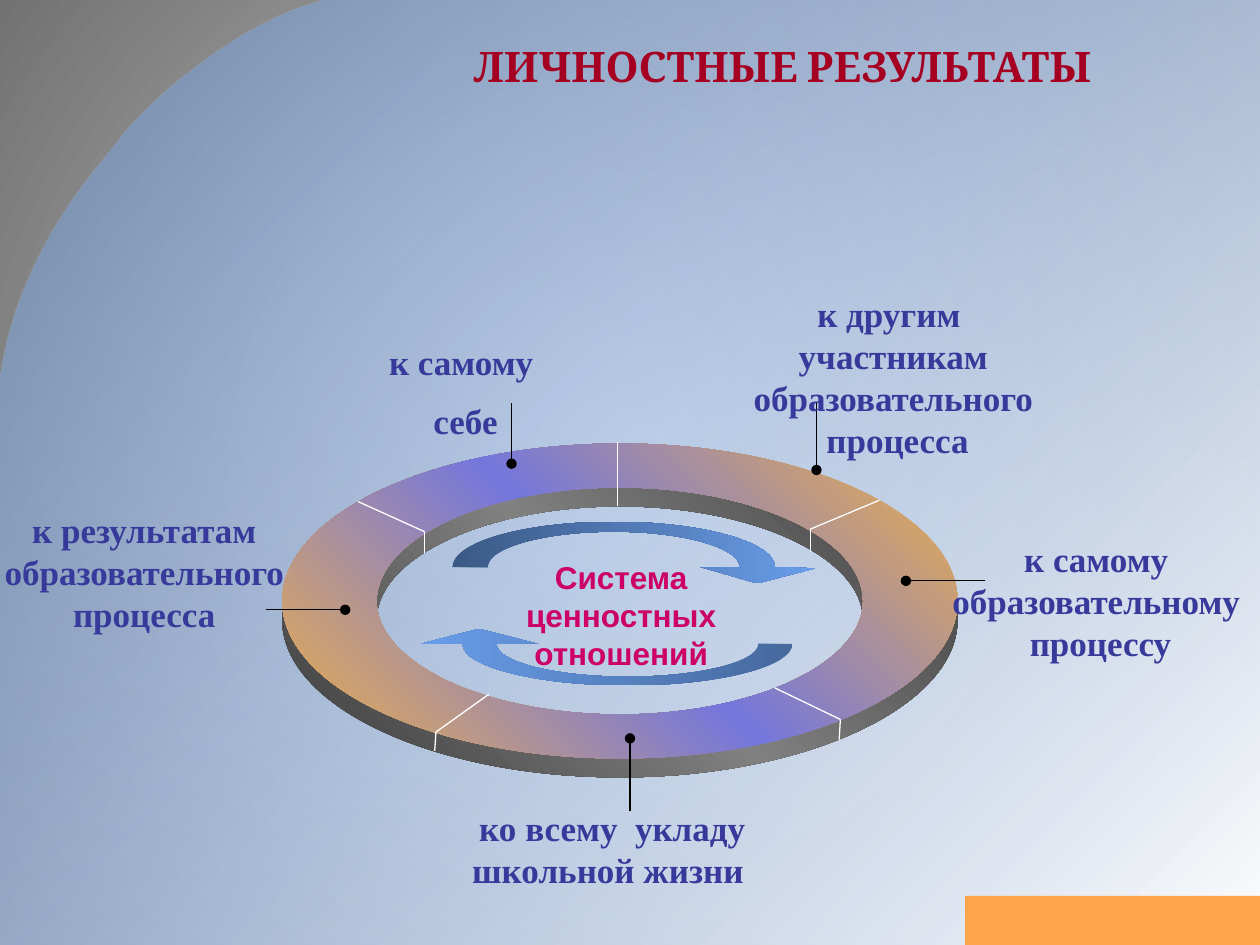
from math import cos, radians, sin

from lxml import etree
from pptx import Presentation
from pptx.dml.color import RGBColor
from pptx.enum import shapes, text
from pptx.oxml import ns
from pptx.util import Inches, Pt

CRIMSON = RGBColor(0xA5, 0x00, 0x21)
INDIGO = RGBColor(0x37, 0x39, 0x9B)
MAGENTA = RGBColor(0xCC, 0x00, 0x66)
ORANGE = RGBColor(0xFF, 0xA5, 0x4B)
WHITE = RGBColor(0xFF, 0xFF, 0xFF)
BLACK = RGBColor(0x00, 0x00, 0x00)
SKY = RGBColor(0x69, 0x9D, 0xE9)
NAVY = RGBColor(0x3B, 0x59, 0x85)
STEEL = RGBColor(0x46, 0x69, 0x9E)
COAL = RGBColor(0x3B, 0x3B, 0x3B)
GREY = RGBColor(0x80, 0x80, 0x80)
GOLD = RGBColor(0xEF, 0xB0, 0x49)
VIOLET = RGBColor(0x74, 0x76, 0xDC)
SILVER = RGBColor(0xCF, 0xCF, 0xCF)
SLATE = RGBColor(0x72, 0x72, 0x72)

TITLE = "ЛИЧНОСТНЫЕ РЕЗУЛЬТАТЫ"
TITLE_FONT = dict(name="Cambria", size=Pt(24), bold=True)
LABEL_FONT = dict(name="Times New Roman", size=Pt(20), bold=True)
CENTRE_FONT = dict(name="Arial", size=Pt(18), bold=True)

# paragraphs, (left, top, width, height), font, colour
LABELS = [
    (["к самому", " себе"], (2.24, 2.65, 2.84, 0.93), LABEL_FONT, INDIGO),
    (["к другим  участникам образовательного  процесса"],
     (5.86, 2.27, 2.46, 1.43), LABEL_FONT, INDIGO),
    (["к самому  образовательному  процессу"],
     (7.28, 4.22, 2.91, 1.1), LABEL_FONT, INDIGO),
    (["ко всему  укладу школьной жизни "], (3.36, 6.35, 3, 0.77), LABEL_FONT, INDIGO),
    (["к результатам образовательного процесса"],
     (-0.35, 3.99, 2.99, 1.1), LABEL_FONT, INDIGO),
    (["Система ценностных отношений"], (3.98, 4.38, 1.9, 1), CENTRE_FONT, MAGENTA),
]

# An outline is a start point, then segments: one point for a line, three for a curve
PANEL = [
    (2.58, 0),
    [(1.9, 0.16), (1.16, 0.83), (0.98, 1.07)],
    [(0.8, 1.32), (0.16, 1.94), (0, 3.01)],
    [(0, 7.5)], [(10, 7.5)], [(10, 0)],
]

RING_X, RING_OUTER, RING_INNER = 4.92, (2.68, 1.25), (1.93, 0.9)
# centre height, gradient stops; the side lies under the face
RINGS = [
    (4.92, [(0, COAL), (50, GREY), (100, COAL)]),
    (4.77, [(0, GOLD), (50, VIOLET), (100, GOLD)]),
]
RING_SEAMS = [
    [(4.9, 4.02), (4.9, 3.51)],
    [(6.98, 3.97), (6.43, 4.2), (6.43, 4.38)],
    [(2.84, 3.98), (3.37, 4.22), (3.37, 4.39)],
    [(3.88, 5.51), (3.46, 5.81), (3.45, 5.96)],
    [(6.15, 5.46), (6.67, 5.71), (6.66, 5.87)],
]
POINTERS = [
    [(4.06, 3.2), (4.06, 3.68)],
    [(6.48, 3.2), (6.48, 3.73)],
    [(5, 6.44), (5, 5.86)],
    [(7.82, 4.61), (7.19, 4.61)],
    [(2.11, 4.84), (2.74, 4.84)],
]
# centre, outer radii, inner radii, start angle, head points, tail colour, gradient angle
ARROWS = [
    ((4.87, 4.5), (1.28, 0.36), (1, 0.28), 180,
     [(6.47, 4.51), (6.01, 4.63), (5.56, 4.5)], NAVY, 0),
    ((4.98, 5.11), (1.31, 0.33), (1.04, 0.26), 0,
     [(3.34, 5.11), (3.8, 4.99), (4.27, 5.11)], STEEL, 180),
]


def arc(centre, radii, start, quarters):
    """Start point and one curve per quarter ellipse; negative runs anticlockwise."""
    turn = 1 if quarters > 0 else -1

    def place(angle, pull=0):
        a = radians(angle)
        return (centre[0] + radii[0] * (cos(a) - pull * sin(a)),
                centre[1] + radii[1] * (sin(a) + pull * cos(a)))

    pull = 0.55 * turn
    angles = [start + 90 * turn * i for i in range(abs(quarters) + 1)]
    curves = [[place(a, pull), place(b, -pull), place(b)] for a, b in zip(angles, angles[1:])]
    return [place(start)] + curves


def set_gradient(fill, owner, stops, angle=None):
    """Stops are (percent, colour[, alpha percent]); no angle means a centred circle."""
    fill.gradient()
    grad = owner.element.find(".//" + ns.qn("a:gradFill"))
    for child in list(grad):
        grad.remove(child)
    stop_list = etree.SubElement(grad, ns.qn("a:gsLst"))
    for place, colour, *alpha in stops:
        stop = etree.SubElement(stop_list, ns.qn("a:gs"), pos=str(place * 1000))
        shade = etree.SubElement(stop, ns.qn("a:srgbClr"), val=str(colour))
        for percent in alpha:
            etree.SubElement(shade, ns.qn("a:alpha"), val=str(percent * 1000))
    if angle is None:
        circle = etree.SubElement(grad, ns.qn("a:path"), path="circle")
        sides = dict.fromkeys("ltrb", "50000")
        etree.SubElement(circle, ns.qn("a:fillToRect"), **sides)
    else:
        etree.SubElement(grad, ns.qn("a:lin"), ang=str(angle * 60000), scaled="0")


def bend(shape, segments):
    """Join each run of three straight steps that stands for a curve into one curve."""
    steps = iter(list(shape.element.iter(ns.qn("a:lnTo"))))
    for segment in segments:
        parts = [next(steps) for _ in segment]
        if len(parts) == 3:
            curve = etree.Element(ns.qn("a:cubicBezTo"))
            parts[0].addprevious(curve)
            for part in parts:
                curve.append(part[0])
                part.getparent().remove(part)


def add_outline(page, outlines, stops, angle):
    builder = None
    for start, *segments in outlines:
        corner = [Inches(v) for v in start]
        if builder is None:
            builder = page.shapes.build_freeform(*corner)
        else:
            builder.move_to(*corner)
        points = [(Inches(x), Inches(y)) for segment in segments for x, y in segment]
        builder.add_line_segments(points, close=True)
    shape = builder.convert_to_shape()
    bend(shape, [segment for outline in outlines for segment in outline[1:]])
    shape.shadow.inherit = False
    shape.line.fill.background()
    set_gradient(shape.fill, shape, stops, angle)
    return shape


def add_line(page, start, end, colour, dot=False):
    line = page.shapes.add_connector(
        shapes.MSO_CONNECTOR.STRAIGHT, *(Inches(v) for v in (*start, *end)))
    line.line.color.rgb = colour
    line.line.width = Pt(0.75)
    if dot:
        outline = line.element.spPr.find(ns.qn("a:ln"))
        etree.SubElement(outline, ns.qn("a:tailEnd"), type="oval")
    etree.SubElement(line.element.spPr, ns.qn("a:effectLst"))


def write(box, paragraphs, font, colour):
    frame = box.text_frame
    frame.word_wrap = True
    frame.text = "\n".join(paragraphs)
    for i, para in enumerate(frame.paragraphs):
        para.alignment = text.PP_ALIGN.CENTER
        para.space_before = Pt(10 if i else 0)
        for span in para.runs:
            for name, value in font.items():
                setattr(span.font, name, value)
            span.font.color.rgb = colour


def main():
    deck = Presentation()
    deck.slide_width, deck.slide_height = Inches(10), Inches(7.5)
    page = deck.slides.add_slide(deck.slide_layouts[5])
    set_gradient(page.background.fill, page, [(0, SILVER), (100, SLATE)])

    title = page.shapes.title
    title.left, title.top, title.width, title.height = map(Inches, (2.42, 0.21, 7.58, 0.63))
    title.text_frame.vertical_anchor = text.MSO_ANCHOR.MIDDLE
    write(title, [TITLE], TITLE_FONT, CRIMSON)

    panel = add_outline(page, [PANEL], [(0, SKY, 39), (100, WHITE)], 45)
    title.element.addprevious(panel.element)

    for y, stops in RINGS:
        rims = [arc((RING_X, y), RING_OUTER, 180, 4), arc((RING_X, y), RING_INNER, 180, -4)]
        add_outline(page, rims, stops, 315)
    for seam in RING_SEAMS:
        for start, end in zip(seam, seam[1:]):
            add_line(page, start, end, WHITE)
    for start, end in POINTERS:
        add_line(page, start, end, BLACK, dot=True)

    for paragraphs, place, font, colour in LABELS:
        box = page.shapes.add_textbox(*map(Inches, place))
        write(box, paragraphs, font, colour)

    for centre, outer, inner, start, head, tail, angle in ARROWS:
        back, *curves = arc(centre, inner, start + 180, -2)
        outline = arc(centre, outer, start, 2) + [[point] for point in head + [back]] + curves
        add_outline(page, [outline], [(0, tail), (100, SKY)], angle)

    bar = page.shapes.add_shape(
        shapes.MSO_SHAPE.RECTANGLE, *map(Inches, (7.66, 7.11, 2.34, 0.39)))
    bar.shadow.inherit = False
    bar.fill.solid()
    bar.fill.fore_color.rgb = ORANGE
    bar.line.fill.background()

    deck.save("out.pptx")


if __name__ == "__main__":
    main()
